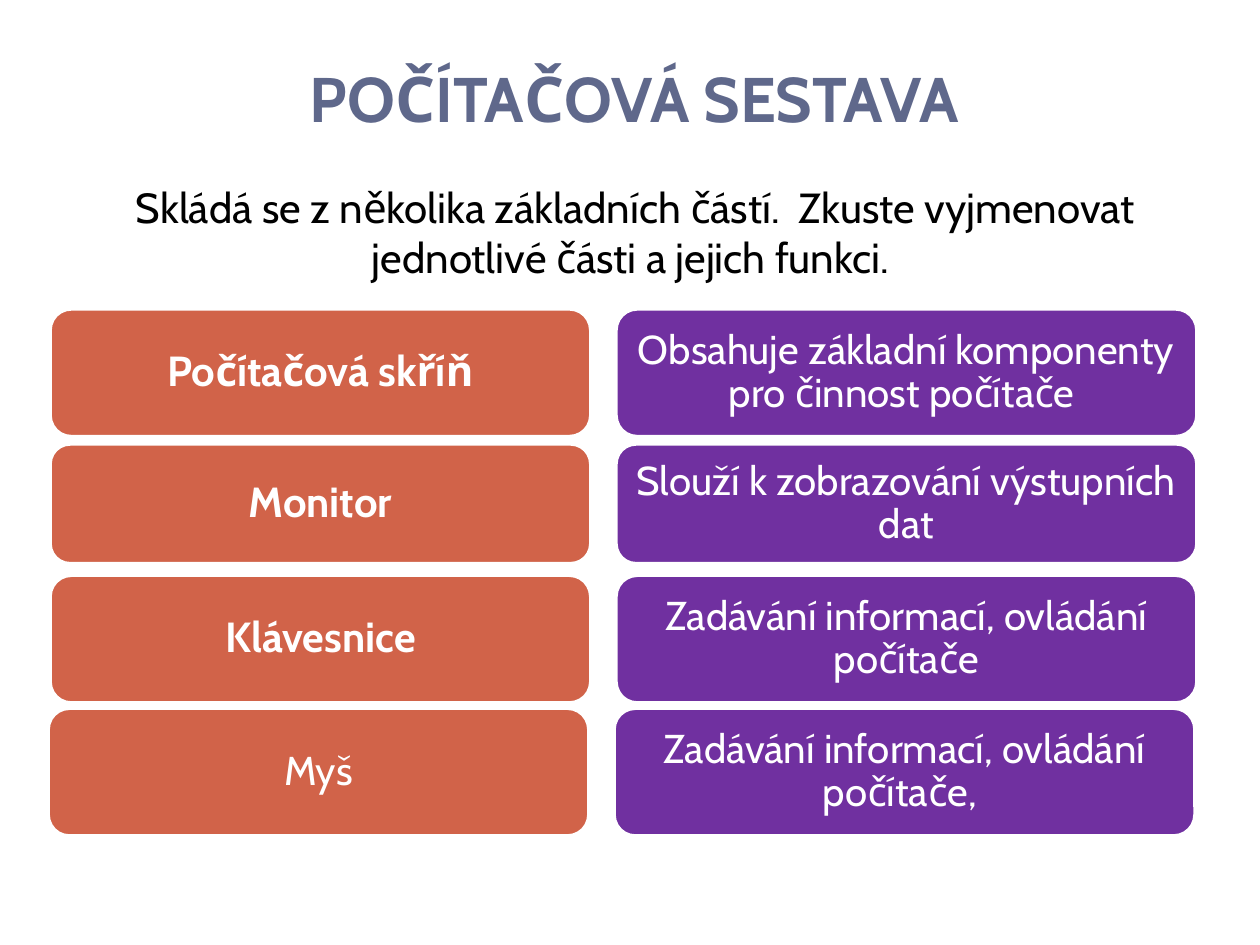
from dataclasses import dataclass

from pptx import Presentation
from pptx.dml.color import RGBColor
from pptx.enum.shapes import MSO_SHAPE
from pptx.enum.text import MSO_ANCHOR, MSO_AUTO_SIZE, PP_ALIGN
from pptx.util import Pt

ROUND = MSO_SHAPE.ROUNDED_RECTANGLE
TOP, MIDDLE, BOTTOM = MSO_ANCHOR.TOP, MSO_ANCHOR.MIDDLE, MSO_ANCHOR.BOTTOM
FIXED = MSO_AUTO_SIZE.NONE
CENTER = PP_ALIGN.CENTER


@dataclass(frozen=True)
class Theme:
    font: str = "Cabin"
    title: str = "5F688B"
    ink: str = "000000"
    paper: str = "FFFFFF"
    rust: str = "D16349"
    purple: str = "7030A0"
    head: int = 36
    lead: int = 24
    note: int = 23


def write(shape, text, *, font, size, color, bold=False, anchor=TOP,
          inset=(7.2, 3.6), lines=None, before=0):
    frame = shape.text_frame
    frame.word_wrap = True
    frame.auto_size = FIXED
    frame.vertical_anchor = anchor
    frame.margin_left = frame.margin_right = Pt(inset[0])
    frame.margin_top = frame.margin_bottom = Pt(inset[1])
    para = frame.paragraphs[0]
    para.alignment = CENTER
    para.space_before = Pt(before)
    if lines is not None:
        para.line_spacing = lines
    run = para.add_run()
    run.text = text
    run.font.name = font
    run.font.size = Pt(size)
    run.font.bold = bold
    run.font.color.rgb = RGBColor.from_string(color)


class Deck:
    def __init__(self, slide, theme):
        self.slide = slide
        self.theme = theme

    def title(self, text, left, top, width, height):
        shape = self.slide.shapes.title
        shape.left, shape.top = Pt(left), Pt(top)
        shape.width, shape.height = Pt(width), Pt(height)
        write(shape, text, font=self.theme.font, size=self.theme.head,
              color=self.theme.title, bold=True, anchor=BOTTOM, lines=Pt(20))

    def lead(self, text, left, top, width, height):
        box = self.slide.shapes.add_textbox(Pt(left), Pt(top), Pt(width), Pt(height))
        write(box, text, font=self.theme.font, size=self.theme.lead,
              color=self.theme.ink, inset=(10, 3.6), before=6)

    def card(self, text, left, top, width, height, fill, size, bold=False):
        card = self.slide.shapes.add_shape(
            ROUND, Pt(left), Pt(top), Pt(width), Pt(height))
        card.shadow.inherit = False
        card.fill.solid()
        card.fill.fore_color.rgb = RGBColor.from_string(fill)
        card.line.color.rgb = RGBColor.from_string(self.theme.paper)
        card.line.width = Pt(2)
        write(card, text, font=self.theme.font, size=size, color=self.theme.paper,
              bold=bold, anchor=MIDDLE, inset=(6.5, 3.5), lines=0.9)


def main():
    show = Presentation()
    show.slide_width, show.slide_height = Pt(720), Pt(540)
    theme = Theme()
    deck = Deck(show.slides.add_slide(show.slide_layouts[5]), theme)
    deck.title("POČÍTAČOVÁ SESTAVA", 31, 31.7, 663, 49)
    deck.lead("Skládá se z několika základních částí.  Zkuste vyjmenovat "
              "jednotlivé části a jejich funkci. ", 20, 100, 686, 79)

    rows = [
        ("Počítačová skříň", "Obsahuje základní komponenty pro činnost počítače ",
         176.5, 73, 0, True),
        ("Monitor", "Slouží k zobrazování výstupních dat", 253.7, 68.4, 0, True),
        ("Klávesnice", "Zadávání informací, ovládání počítače", 328.7, 73, 0, True),
        ("Myš", "Zadávání informací, ovládání počítače, ", 404.7, 73, -1.1, False),
    ]
    for device, role, top, height, shift, bold in rows:
        size = theme.lead if bold else theme.note
        deck.card(device, 28.6 + shift, top, 309, height, theme.rust, size, bold)
        deck.card(role, 352 + shift, top, 332, height, theme.purple, theme.note)
    show.save("out.pptx")


if __name__ == "__main__":
    main()
